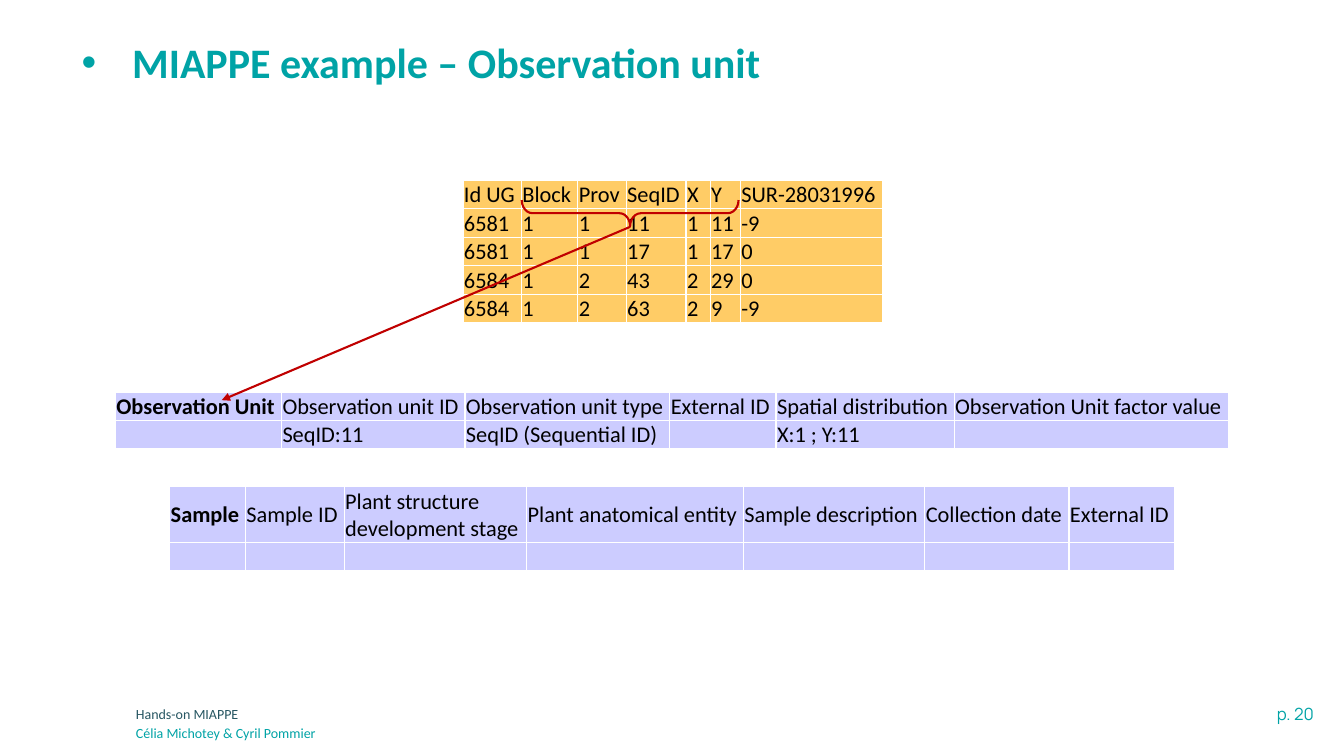
from lxml import etree
from pptx import Presentation
from pptx.dml.color import RGBColor
from pptx.enum.shapes import MSO_CONNECTOR, MSO_SHAPE
from pptx.enum.text import MSO_ANCHOR, MSO_AUTO_SIZE, PP_ALIGN
from pptx.oxml.ns import qn
from pptx.util import Inches, Pt

LEFT, RIGHT = PP_ALIGN.LEFT, PP_ALIGN.RIGHT
MID, LOW = MSO_ANCHOR.MIDDLE, MSO_ANCHOR.BOTTOM
FIXED = MSO_AUTO_SIZE.NONE
BRACE = MSO_SHAPE.RIGHT_BRACE
LINE = MSO_CONNECTOR.STRAIGHT

HUES = {"teal": "00A3A6", "dark": "275662", "black": "000000", "white": "FFFFFF",
        "lilac": "CCCCFF", "gold": "FFCC66", "red": "C00000"}
ROW = 3.76  # height of a one-line table row, in grid rows


def hue(name):
    return RGBColor.from_string(HUES[name])


def apply(item, **form):
    for key, value in form.items():
        setattr(item, key, value)


def sub(node, tag, **attrs):
    return etree.SubElement(node, qn(tag), **attrs)


class Board:
    """One slide on a grid of 100 columns by 100 rows."""

    def __init__(self, deck, font="Calibri"):
        self.wide, self.high = deck.slide_width, deck.slide_height
        self.slide = deck.slides.add_slide(deck.slide_layouts[5])
        self.shapes = self.slide.shapes
        self.font = font

    def x(self, cols):
        return round(self.wide * cols / 100)

    def y(self, rows):
        return round(self.high * rows / 100)

    def box(self, left, top, wide, high):
        return self.x(left), self.y(top), self.x(wide), self.y(high)

    def add_text(self, para, text, size, color, bold=False, font=None):
        run = para.add_run()
        run.text = text
        apply(run.font, name=font or self.font, size=Pt(size), bold=bold)
        run.font.color.rgb = hue(color)

    def title(self, area, text):
        shape = self.shapes.title
        apply(shape, **dict(zip(("left", "top", "width", "height"), self.box(*area))))
        frame = shape.text_frame
        apply(frame, margin_left=0, vertical_anchor=MID, auto_size=FIXED, word_wrap=True)
        para = frame.paragraphs[0]
        apply(para, alignment=LEFT, line_spacing=0.9)
        props = para._p.get_or_add_pPr()
        props.set("marL", str(Inches(0.5)))
        props.set("indent", str(-Inches(0.5)))
        sub(props, "a:buFont", typeface="Arial")
        sub(props, "a:buChar", char="•")
        self.add_text(para, text, 30, "teal", True)

    def label(self, area, text, size, color, align=LEFT, font=None):
        frame = self.shapes.add_textbox(*self.box(*area)).text_frame
        frame.word_wrap = True
        para = frame.paragraphs[0]
        para.alignment = align
        self.add_text(para, text, size, color, font=font)

    def table(self, left, top, cols, rows, data, fill, head=LOW, bold=False):
        area = self.box(left, top, sum(cols), sum(rows))
        grid = self.shapes.add_table(len(rows), len(cols), *area).table
        apply(grid, first_row=False, horz_banding=False)
        for col, wide in zip(grid.columns, cols):
            col.width = self.x(wide)
        for r, (row, high) in enumerate(zip(grid.rows, rows)):
            row.height = self.y(high)
            for c, (cell, text) in enumerate(zip(row.cells, data[r])):
                anchor = LOW if r else head
                self.cell(cell, text, fill, anchor, bold and r == c == 0)

    def cell(self, cell, text, fill, anchor, bold):
        thin = Inches(0.01)
        apply(cell, margin_left=thin, margin_right=thin, margin_top=thin,
              margin_bottom=0, vertical_anchor=anchor)
        para = cell.text_frame.paragraphs[0]
        if text:
            self.add_text(para, text, 16, "black", bold)
        else:
            sub(para._p, "a:endParaRPr", sz="1600")
        props = cell._tc.get_or_add_tcPr()
        for side in "LRTB":
            edge = sub(props, f"a:ln{side}", w=str(Pt(1)))
            sub(sub(edge, "a:solidFill"), "a:srgbClr", val=HUES["white"])
        cell.fill.solid()
        cell.fill.fore_color.rgb = hue(fill)

    def stroke(self, item, color):
        item.line.color.rgb = hue(color)
        item.line.width = Pt(1.5)

    def brace(self, area, color):
        shape = self.shapes.add_shape(BRACE, *self.box(*area))
        shape.rotation = 90
        shape.adjustments[0] = 0.41
        shape.shadow.inherit = False
        shape.fill.background()
        self.stroke(shape, color)

    def arrow(self, start, end, color):
        line = self.shapes.add_connector(
            LINE, self.x(start[0]), self.y(start[1]), self.x(end[0]), self.y(end[1]))
        self.stroke(line, color)
        props = line._element.spPr
        sub(props.find(qn("a:ln")), "a:tailEnd", type="triangle")
        sub(props, "a:effectLst")


def main():
    deck = Presentation()
    apply(deck, slide_width=Inches(13.33), slide_height=Inches(7.5))
    board = Board(deck)

    # Title and footer
    board.title((6.08, 2.13, 88.2, 12.93), "MIAPPE example – Observation unit")
    board.label((81.4, 92.4, 17.1, 4), "p. 20", 12, "teal", RIGHT, "Manrope")
    board.label((9.38, 92.67, 55.06, 3.73), "Hands-on MIAPPE", 10, "dark")
    board.label((9.38, 95.2, 55.06, 3.73), "Célia Michotey & Cyril Pommier", 10, "teal")

    # Observation unit fields
    board.table(8.59, 51.87, (12.36, 13.65, 15.25, 7.9, 13.26, 20.4), (ROW, ROW), [
        ("Observation Unit", "Observation unit ID", "Observation unit type",
         "External ID", "Spatial distribution", "Observation Unit factor value"),
        ("", "SeqID:11", "SeqID (Sequential ID)", "", "X:1 ; Y:11", ""),
    ], "lilac", MID, True)

    # Sample fields
    board.table(12.63, 64.4, (5.63, 7.35, 13.58, 16.13, 13.5, 10.73, 7.88), (7.35, ROW), [
        ("Sample", "Sample ID", "Plant structure development stage",
         "Plant anatomical entity", "Sample description", "Collection date", "External ID"),
        ("",) * 7,
    ], "lilac", MID, True)

    # Field data
    board.table(34.45, 23.87, (4.35, 4.2, 3.6, 4.45, 1.8, 2.25, 10.58), (ROW,) * 5, [
        ("Id UG", "Block", "Prov", "SeqID", "X", "Y", "SUR-28031996"),
        ("6581", "1", "1", "11", "1", "11", "-9"),
        ("6581", "1", "1", "17", "1", "17", "0"),
        ("6584", "1", "2", "43", "2", "29", "0"),
        ("6584", "1", "2", "63", "2", "9", "-9"),
    ], "gold")

    # Link from the data columns to the observation unit
    board.brace((45.91, 13.87, 1.95, 28.67), "red")
    board.arrow((46.89, 30), (16.5, 52.93), "red")

    deck.save("out.pptx")


if __name__ == "__main__":
    main()
